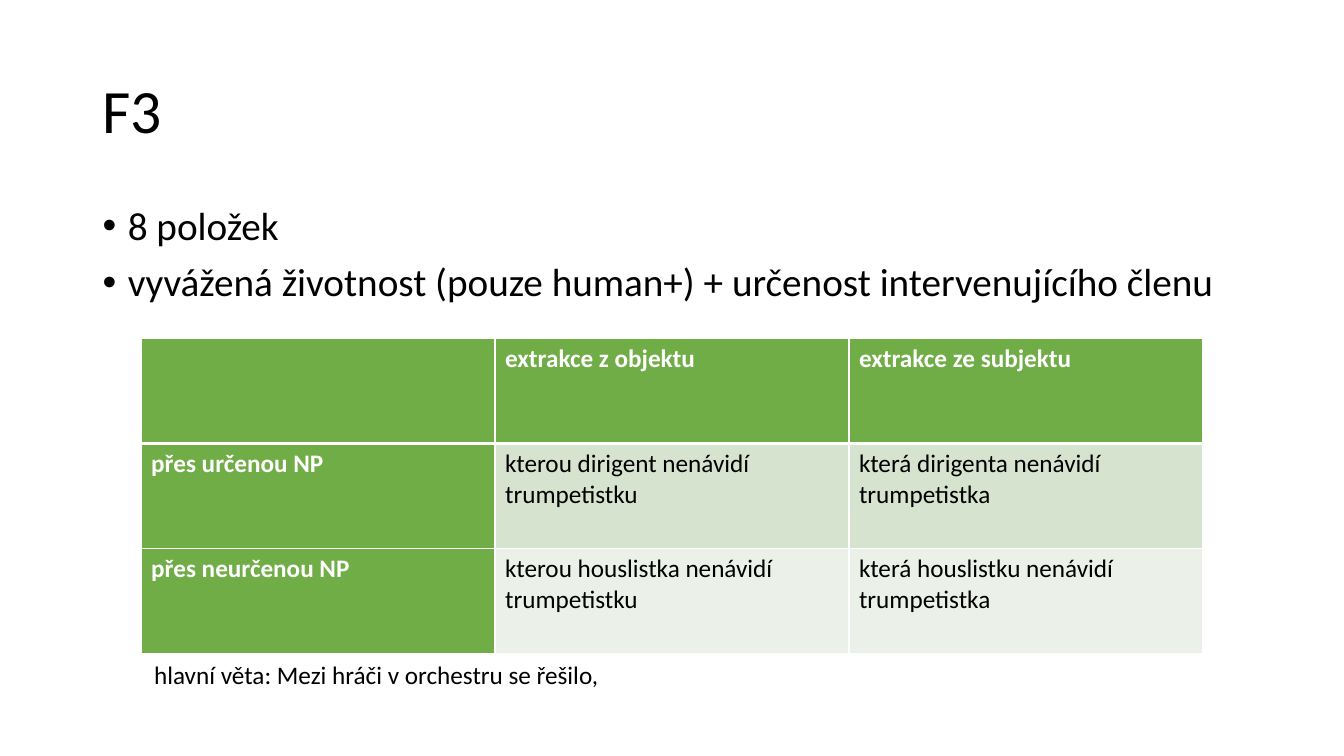
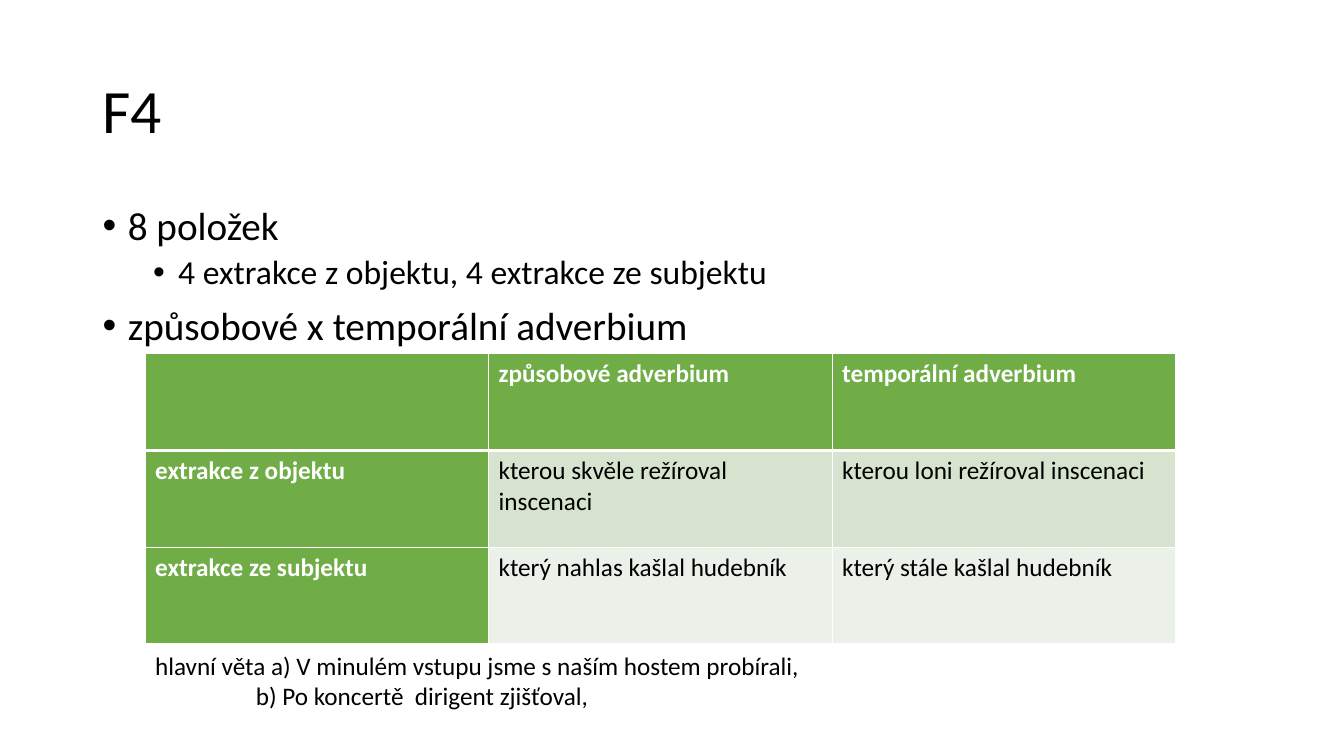
from dataclasses import dataclass

from lxml import etree
from pptx import Presentation, util as u
from pptx.dml.color import RGBColor
from pptx.enum import text
from pptx.oxml import ns


@dataclass(frozen=True)
class Theme:
    font: str = "Calibri"
    ink: str = "000000"
    white: str = "FFFFFF"
    green: str = "70AD47"
    bands: tuple = ("D5E3CF", "EBF1E9")
    title: int = 44
    bullets: tuple = (28, 24)
    small: int = 18
    rule: int = 1
    heavy: int = 3


look = Theme()
deck = Presentation()
deck.slide_width, deck.slide_height = u.Inches(40 / 3), u.Inches(7.5)


def place(*at):
    """Turn left, top, width, height from percent of the slide into lengths."""
    sides = (deck.slide_width, deck.slide_height) * 2
    return [round(side * share / 100) for side, share in zip(sides, at)]


def write(frame, words, size=look.small, color=look.ink, bold=False,
          lead=1.0, before=0, left=0.0, bullet=False):
    """Add one paragraph, filling the first one if it is still empty."""
    first = frame.paragraphs[0]
    para = frame.add_paragraph() if first.runs else first
    para.line_spacing, para.space_before = lead, u.Pt(before)
    run = para.add_run()
    run.text = words
    run.font.name, run.font.size, run.font.bold = look.font, u.Pt(size), bold
    run.font.color.rgb = RGBColor.from_string(color)
    props = para._p.get_or_add_pPr()
    props.set("marL", str(u.Inches(left)))
    if bullet:
        props.set("indent", str(-u.Inches(0.25)))
        etree.SubElement(props, ns.qn("a:buFont"), typeface="Arial")
        etree.SubElement(props, ns.qn("a:buChar"), char="•")


# Shared places, in percent of the slide
HEAD = (6.9, 5.33, 86.25, 19.33)
BODY = (6.9, 26.67, 86.25, 63.47)

# Content: bullets are (level, words), notes are (indent in inches, words)
pages = [
    dict(
        title="F3",
        points=[(0, "8 položek"),
                (0, "vyvážená životnost (pouze human+) + určenost intervenujícího členu")],
        grid=(10.5, 44.8, 79, 41.6),
        rows=[("", "extrakce z objektu", "extrakce ze subjektu"),
              ("přes určenou NP", "kterou dirigent nenávidí trumpetistku",
               "která dirigenta nenávidí trumpetistka"),
              ("přes neurčenou NP", "kterou houslistka nenávidí trumpetistku",
               "která houslistku nenávidí trumpetistka")],
        foot=(10.73, 86.53, 78.77, 5.33),
        notes=[(0, "hlavní věta: Mezi hráči v orchestru se řešilo,")],
    ),
    dict(
        title="F4",
        points=[(0, "8 položek"),
                (1, "4 extrakce z objektu, 4 extrakce ze subjektu"),
                (0, "způsobové x temporální adverbium")],
        grid=(10.8, 46.8, 76.67, 38.4),
        rows=[("", "způsobové adverbium", "temporální adverbium"),
              ("extrakce z objektu", "kterou skvěle režíroval inscenaci",
               "kterou loni režíroval inscenaci"),
              ("extrakce ze subjektu", "který nahlas kašlal hudebník",
               "který stále kašlal hudebník")],
        foot=(10.8, 85.33, 76.67, 9.47),
        notes=[(0, "hlavní věta a) V minulém vstupu jsme s naším hostem probírali,"),
               (1, "b) Po koncertě  dirigent zjišťoval,")],
    ),
]

for page in pages:
    slide = deck.slides.add_slide(deck.slide_layouts[6])

    # Text frames
    head, body, foot = (slide.shapes.add_textbox(*place(*at)).text_frame
                        for at in (HEAD, BODY, page["foot"]))
    for frame in (head, body, foot):
        frame.word_wrap = True
    head.vertical_anchor = text.MSO_ANCHOR.MIDDLE

    # Title, bullets and notes
    write(head, page["title"], size=look.title, lead=0.9)
    for level, words in page["points"]:
        write(body, words, size=look.bullets[level], lead=0.9,
              before=10 - 5 * level, left=0.25 + 0.5 * level, bullet=True)
    for left, words in page["notes"]:
        write(foot, words, left=left)

    # Table
    rows = page["rows"]
    table = slide.shapes.add_table(len(rows), len(rows[0]), *place(*page["grid"])).table
    table.first_row = table.horz_banding = False
    for r, row in enumerate(rows):
        for c, words in enumerate(row):
            cell = table.cell(r, c)
            label = r == 0 or c == 0

            # White rules, heavier under the header row
            props = cell._tc.get_or_add_tcPr()
            for side in "LRTB":
                thick = (r, side) in ((0, "B"), (1, "T"))
                width = u.Pt(look.heavy if thick else look.rule)
                line = etree.SubElement(props, ns.qn("a:ln" + side), w=str(width))
                paint = etree.SubElement(line, ns.qn("a:solidFill"))
                etree.SubElement(paint, ns.qn("a:srgbClr"), val=look.white)

            cell.fill.solid()
            cell.fill.fore_color.rgb = RGBColor.from_string(
                look.green if label else look.bands[r - 1])
            if words:
                write(cell.text_frame, words, bold=label,
                      color=look.white if label else look.ink)

deck.save("out.pptx")
